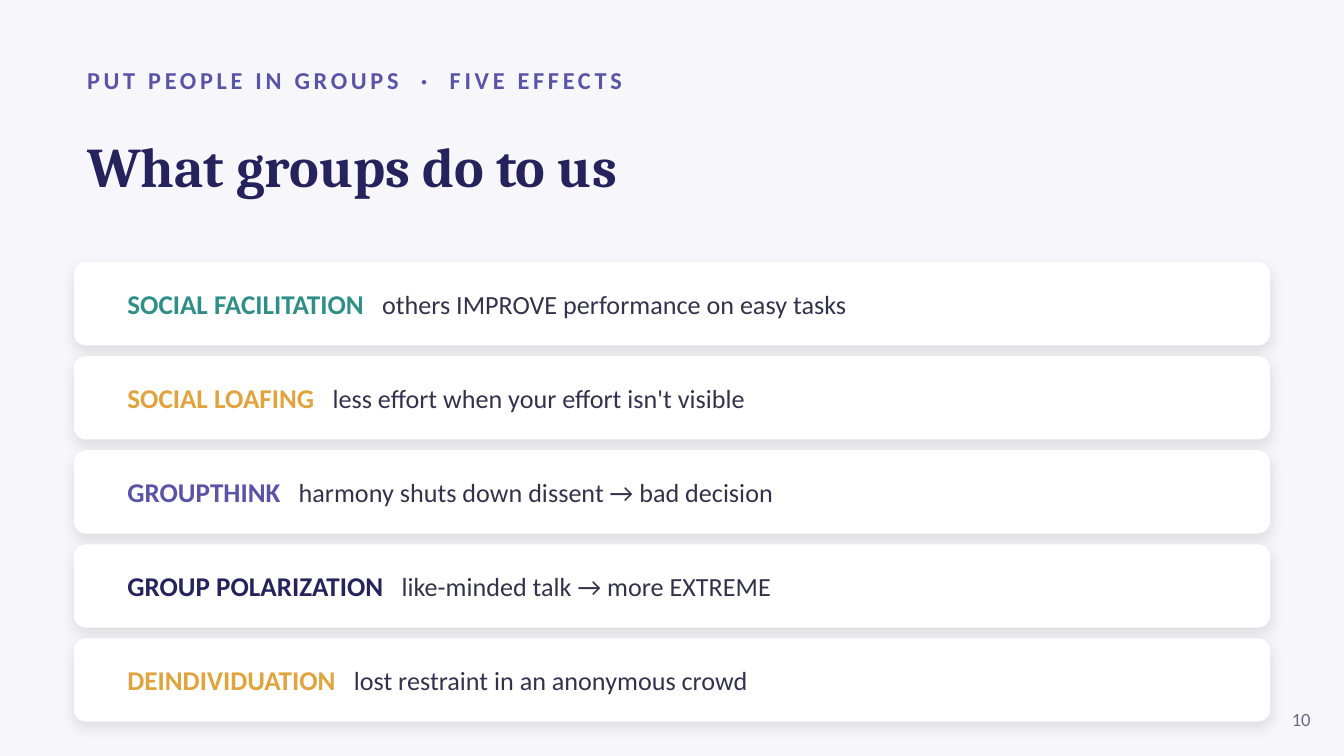
import pptx
import pptx.dml.color
import pptx.enum.shapes
import pptx.enum.text
import pptx.oxml
import pptx.util
from pptx.dml.color import RGBColor
from pptx.util import Inches

BACKGROUND = RGBColor(0xF7, 0xF7, 0xFB)
WHITE = RGBColor(0xFF, 0xFF, 0xFF)
NAVY = RGBColor(0x26, 0x23, 0x5C)
PURPLE = RGBColor(0x5B, 0x53, 0xA6)
TEAL = RGBColor(0x2F, 0x8F, 0x86)
AMBER = RGBColor(0xE0, 0xA3, 0x3E)
INK = RGBColor(0x33, 0x32, 0x4A)
GREY = RGBColor(0x6B, 0x6A, 0x86)

KICKER = ["PUT PEOPLE IN GROUPS", "·", "FIVE EFFECTS"]
TITLE = "What groups do to us"
PAGE_NUMBER = "10"
EFFECTS = [
    ("SOCIAL FACILITATION", "others IMPROVE performance on easy tasks", TEAL),
    ("SOCIAL LOAFING", "less effort when your effort isn't visible", AMBER),
    ("GROUPTHINK", "harmony shuts down dissent → bad decision", PURPLE),
    ("GROUP POLARIZATION", "like-minded talk → more EXTREME", NAVY),
    ("DEINDIVIDUATION", "lost restraint in an anonymous crowd", AMBER),
]

SLIDE_WIDTH = 10
SLIDE_HEIGHT = SLIDE_WIDTH * 9 / 16
LEFT, CARD_WIDTH, CARD_HEIGHT = 0.55, 8.9, 0.62
FIRST_CARD_TOP, CARD_STEP = 1.95, 0.7
TEXT_INSET_X, TEXT_INSET_Y = 0.3, 0.08

SHADOW_XML = (
    '<a:effectLst xmlns:a="http://schemas.openxmlformats.org/drawingml/2006/main">'
    '<a:outerShdw blurRad="{blur}" dist="{distance}" dir="5400000" algn="bl" rotWithShape="0">'
    '<a:srgbClr val="000000"><a:alpha val="10000"/></a:srgbClr>'
    "</a:outerShdw></a:effectLst>"
)


def add_text_box(slide, left, top, width, height):
    """Add a vertically centred text box and return its first paragraph."""
    box = slide.shapes.add_textbox(*map(Inches, (left, top, width, height)))
    box.text_frame.word_wrap = True
    box.text_frame.vertical_anchor = pptx.enum.text.MSO_ANCHOR.MIDDLE
    return box.text_frame.paragraphs[0]


def add_run(paragraph, text, size, color, bold=False, font="Calibri", spacing=0):
    """Add a run; spacing is extra points after each letter."""
    run = paragraph.add_run()
    run.text = text
    run.font.size = pptx.util.Pt(size)
    run.font.name = font
    run.font.bold = bold
    run.font.color.rgb = color
    if spacing:
        run.font._element.set("spc", str(int(spacing * 100)))


def add_card(slide, top):
    card = slide.shapes.add_shape(
        pptx.enum.shapes.MSO_SHAPE.ROUNDED_RECTANGLE,
        *map(Inches, (LEFT, top, CARD_WIDTH, CARD_HEIGHT)),
    )
    card.adjustments[0] = 0.145
    card.fill.solid()
    card.fill.fore_color.rgb = WHITE
    card.line.fill.background()
    shadow = SHADOW_XML.format(blur=pptx.util.Pt(7), distance=pptx.util.Pt(3))
    card._element.spPr.append(pptx.oxml.parse_xml(shadow))


def add_effect(slide, top, name, description, color):
    add_card(slide, top)
    paragraph = add_text_box(
        slide, LEFT + TEXT_INSET_X, top + TEXT_INSET_Y,
        CARD_WIDTH - 2 * TEXT_INSET_X, CARD_HEIGHT - 2 * TEXT_INSET_Y,
    )
    add_run(paragraph, name, 14.5, color, bold=True)
    add_run(paragraph, " ", 14.5, color, bold=True, spacing=6.5)
    add_run(paragraph, description, 14, INK)


def main():
    presentation = pptx.Presentation()
    presentation.slide_width = Inches(SLIDE_WIDTH)
    presentation.slide_height = Inches(SLIDE_HEIGHT)
    slide = presentation.slides.add_slide(presentation.slide_layouts[6])
    slide.background.fill.solid()
    slide.background.fill.fore_color.rgb = BACKGROUND

    kicker = add_text_box(slide, LEFT, 0.42, 9, 0.35)
    for index, part in enumerate(KICKER):
        if index:
            add_run(kicker, " ", 13, PURPLE, bold=True, spacing=7)
        add_run(kicker, part, 13, PURPLE, bold=True, spacing=2)

    title = add_text_box(slide, LEFT, 0.78, CARD_WIDTH, 0.9)
    add_run(title, TITLE, 30, NAVY, bold=True, font="Cambria")

    for index, effect in enumerate(EFFECTS):
        add_effect(slide, FIRST_CARD_TOP + index * CARD_STEP, *effect)

    page_number = add_text_box(slide, 9.35, 5.2, 0.5, 0.3)
    page_number.alignment = pptx.enum.text.PP_ALIGN.RIGHT
    add_run(page_number, PAGE_NUMBER, 10, GREY)

    presentation.save("out.pptx")


if __name__ == "__main__":
    main()
